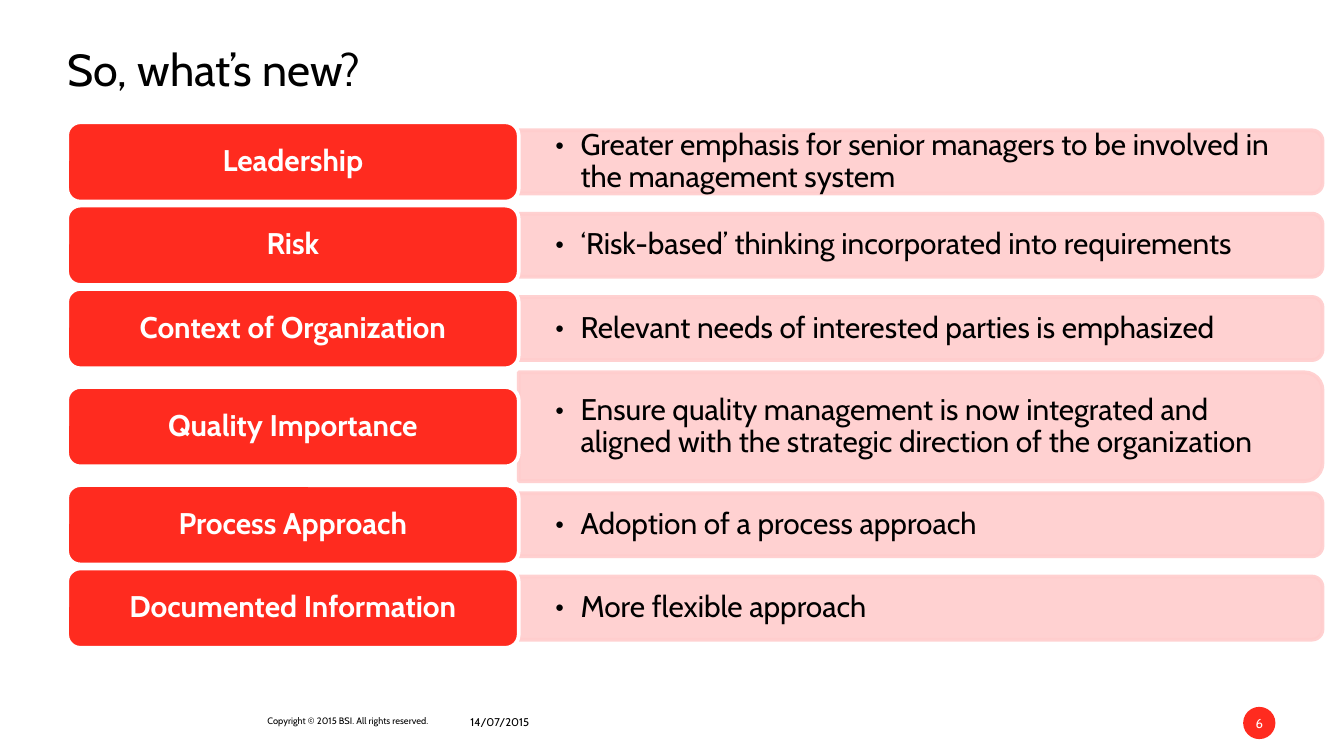
from dataclasses import dataclass

from lxml import etree
from pptx import Presentation
from pptx.dml.color import RGBColor
from pptx.enum.shapes import MSO_SHAPE
from pptx.enum.text import MSO_ANCHOR, MSO_AUTO_SIZE, PP_ALIGN
from pptx.oxml.ns import qn
from pptx.util import Inches, Pt

ELLIPSE = MSO_SHAPE.OVAL
ROUNDED = MSO_SHAPE.ROUNDED_RECTANGLE
ROUNDED_END = MSO_SHAPE.ROUND_2_SAME_RECTANGLE
TOP, MIDDLE = MSO_ANCHOR.TOP, MSO_ANCHOR.MIDDLE
LEFT, CENTER = PP_ALIGN.LEFT, PP_ALIGN.CENTER
NO_FIT = MSO_AUTO_SIZE.NONE


@dataclass(frozen=True)
class Theme:
    """Hold the colours, font and type sizes of the slide."""
    red: RGBColor = RGBColor(0xFF, 0x2B, 0x1F)
    pink: RGBColor = RGBColor(0xFF, 0xCD, 0xCD)
    white: RGBColor = RGBColor(0xFF, 0xFF, 0xFF)
    black: RGBColor = RGBColor(0, 0, 0)
    font: str = "Cabin"
    title: int = 24
    body: int = 16
    number: int = 7
    date: int = 6
    copyright: int = 5
    outline: int = 2
    pink_opacity: int = 90


THEME = Theme()
LABEL_WIDTH, LABEL_HEIGHT = 3.36, 0.59
PANEL_HEIGHT, TALL_PANEL_HEIGHT = 0.47, 0.81
ROW_GAP = 0.03
CHANGES = [
    ("Leadership", "Greater emphasis for senior managers to be involved in "
     "the management system", PANEL_HEIGHT),
    ("Risk", "‘Risk-based’ thinking incorporated into requirements", PANEL_HEIGHT),
    ("Context of Organization", "Relevant needs of interested parties is emphasized",
     PANEL_HEIGHT),
    ("Quality Importance", "Ensure quality management is now integrated and "
     "aligned with the strategic direction of the organization", TALL_PANEL_HEIGHT),
    ("Process Approach", "Adoption of a process approach", PANEL_HEIGHT),
    ("Documented Information", "More flexible approach", PANEL_HEIGHT),
]


def write(shape, text, size, color, align=LEFT, anchor=TOP, insets=(0, 0), bold=False):
    """Set one formatted paragraph in a shape and return it."""
    frame = shape.text_frame
    frame.text = text
    frame.word_wrap = True
    frame.auto_size = NO_FIT
    frame.vertical_anchor = anchor
    frame.margin_left = frame.margin_right = Inches(insets[0])
    frame.margin_top = frame.margin_bottom = Inches(insets[1])
    paragraph = frame.paragraphs[0]
    paragraph.alignment = align
    for run in paragraph.runs:
        run.font.name = THEME.font
        run.font.size = Pt(size)
        run.font.bold = bold
        run.font.color.rgb = color
    return paragraph


def add_block(slide, preset, box, fill, line=None):
    """Add a flat filled shape with an optional outline."""
    block = slide.shapes.add_shape(preset, *map(Inches, box))
    block.shadow.inherit = False
    block.fill.solid()
    block.fill.fore_color.rgb = fill
    if line is None:
        block.line.fill.background()
    else:
        block.line.color.rgb = line
        block.line.width = Pt(THEME.outline)
    return block


def add_title(slide, box, text):
    """Place the slide title in its placeholder."""
    title = slide.shapes.title
    title.left, title.top, title.width, title.height = map(Inches, box)
    write(title, text, THEME.title, THEME.black)


def add_panel(slide, box, detail):
    """Add a pink panel, rounded on the right, with its bulleted detail."""
    left, top, width, height = box
    turned = (left + (width - height) / 2, top + (height - width) / 2, height, width)
    panel = add_block(slide, ROUNDED_END, turned, THEME.pink, THEME.pink)
    panel.rotation = 90
    for color in panel._element.spPr.iter(qn("a:srgbClr")):
        etree.SubElement(color, qn("a:alpha"), val=str(THEME.pink_opacity * 1000))

    text_box = (left, top + 0.02, width - 0.02, height - 0.04)
    description = slide.shapes.add_textbox(*map(Inches, text_box))
    paragraph = write(description, detail, THEME.body, THEME.black,
                      anchor=MIDDLE, insets=(0.27, 0.14))
    paragraph.level = 1
    properties = paragraph._p.get_or_add_pPr()
    properties.set("marL", str(Inches(0.19)))
    properties.set("indent", str(Inches(-0.19)))
    etree.SubElement(properties, qn("a:buFont"), typeface=THEME.font)
    etree.SubElement(properties, qn("a:buChar"), char="•")
    paragraph.line_spacing = 0.9
    paragraph.font.size = Pt(THEME.body)


def add_change_row(slide, box, label, detail, panel_height):
    """Add one red label and its panel, both centred in the row."""
    left, top, width, height = box
    panel_top = top + (height - panel_height) / 2
    panel_box = (left + LABEL_WIDTH, panel_top, width - LABEL_WIDTH, panel_height)
    add_panel(slide, panel_box, detail)
    label_box = (left, top + (height - LABEL_HEIGHT) / 2, LABEL_WIDTH, LABEL_HEIGHT)
    heading = add_block(slide, ROUNDED, label_box, THEME.red, THEME.white)
    paragraph = write(heading, label, THEME.body, THEME.white, CENTER, MIDDLE,
                      (0.07, 0.03), bold=True)
    paragraph.line_spacing = 0.9


def add_changes(slide, box):
    """Stack the rows of changes from the top of the box."""
    left, top, width = box
    for label, detail, panel_height in CHANGES:
        height = max(LABEL_HEIGHT, panel_height)
        add_change_row(slide, (left, top, width, height), label, detail, panel_height)
        top += height + ROW_GAP


def add_footer(slide, box):
    """Add the copyright line, the date and the slide number."""
    left, top, width, height = box
    notes = [
        (1.49, 1.34, 0.08, "Copyright © 2015 BSI. All rights reserved.", THEME.copyright),
        (3, 1.43, 0.16, "14/07/2015", THEME.date),
    ]
    for offset, note_width, note_height, text, size in notes:
        note_box = (left + offset, top + 0.06, note_width, note_height)
        note = slide.shapes.add_textbox(*map(Inches, note_box))
        write(note, text, size, THEME.black)
    badge_box = (left + width - height, top, height, height)
    badge = add_block(slide, ELLIPSE, badge_box, THEME.red)
    write(badge, "6", THEME.number, THEME.white, CENTER, MIDDLE)


def main():
    """Build and save the slide."""
    deck = Presentation()
    deck.slide_width = Inches(10)
    deck.slide_height = deck.slide_width * 9 // 16
    slide = deck.slides.add_slide(deck.slide_layouts[5])
    add_title(slide, (0.5, 0.31, 9, 0.39), "So, what’s new?")
    add_changes(slide, (0.5, 0.91, 9.34))
    add_footer(slide, (0.5, 5.26, 8.99, 0.24))
    deck.save("out.pptx")


if __name__ == "__main__":
    main()
